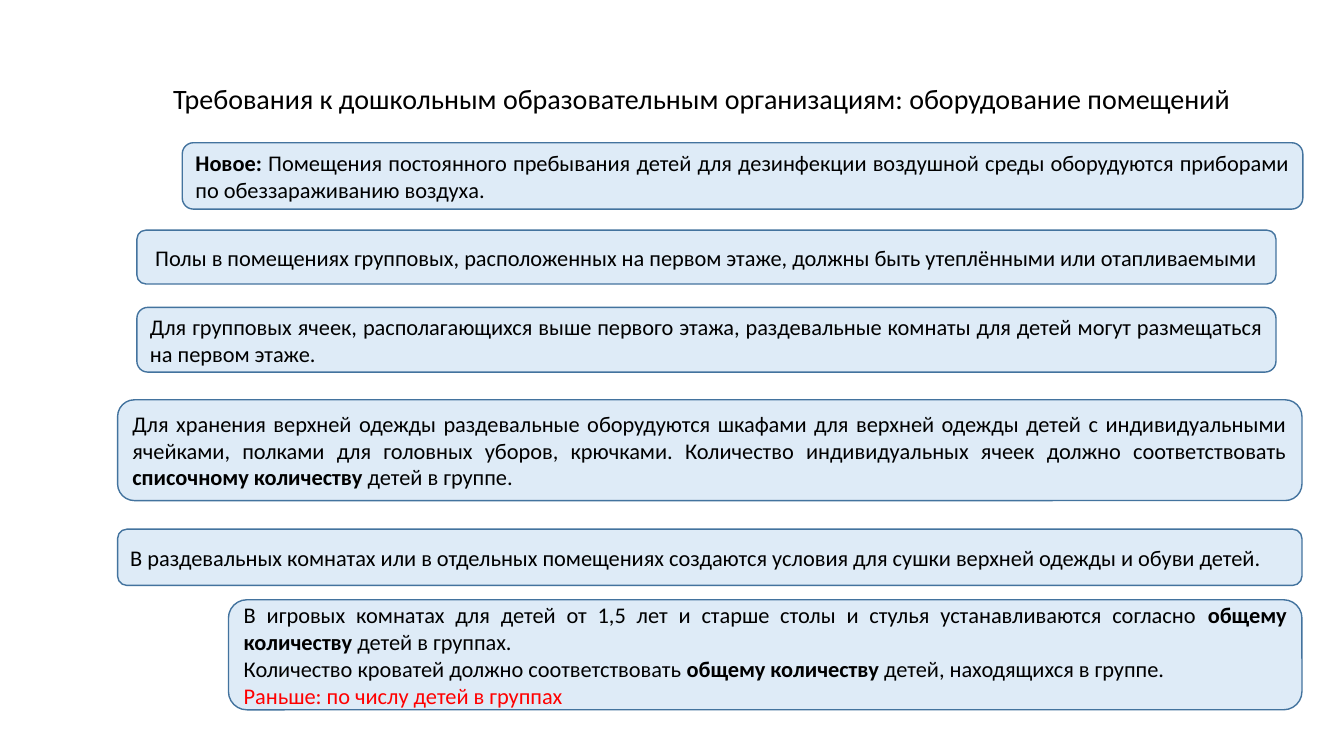
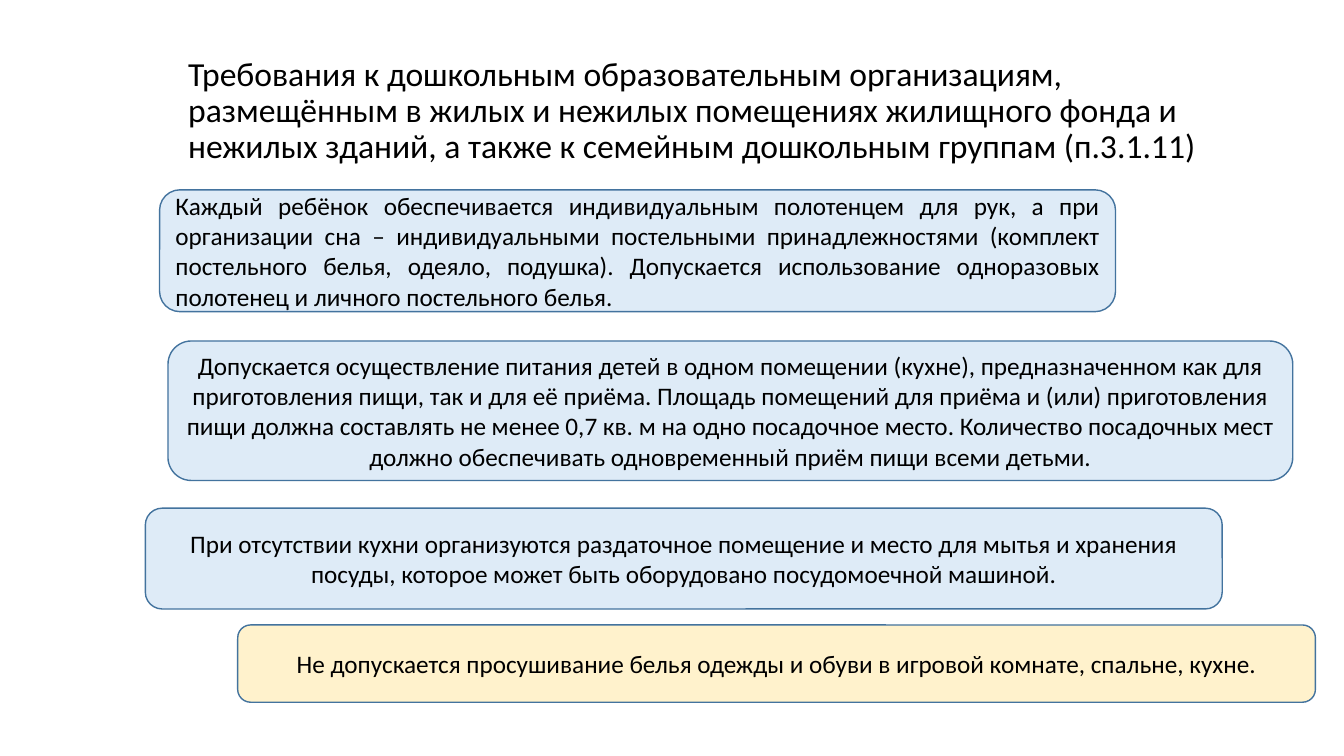
from dataclasses import dataclass

from pptx import Presentation
from pptx.dml.color import RGBColor
from pptx.enum.shapes import MSO_SHAPE as Shape
from pptx.enum.text import MSO_ANCHOR as Anchor, MSO_AUTO_SIZE as Fit, PP_ALIGN as Align
from pptx.util import Inches, Pt

WIDE, HIGH = Inches(13.33), Inches(7.5)
COL, ROW = WIDE / 160, HIGH / 90  # grid of 160 columns by 90 rows
FONT = "Calibri"
BLACK, RED = "000000", "FF0000"
BLUE, CREAM, EDGE = "DEEBF7", "FFF2CC", "43739E"


@dataclass
class Card:
    """Box is left, top, width, height on the grid; *stars* mark bold text."""
    box: tuple
    text: str
    align: Align = Align.CENTER
    fill: str = BLUE
    note: str = ""


def tint(code):
    return RGBColor.from_string(code)


def place(shape, box):
    left, top, wide, high = box
    shape.left, shape.top = round(left * COL), round(top * ROW)
    shape.width, shape.height = round(wide * COL), round(high * ROW)


def style(para, size, align, color=BLACK):
    para.alignment = align
    font = para.font
    font.name, font.size = FONT, Pt(size)
    font.color.rgb = tint(color)


def write(para, text):
    for i, part in enumerate(text.split("*")):
        if part:
            run = para.add_run()
            run.text = part
            if i % 2:
                run.font.bold = True


def add_title(slide, box, text, size):
    title = slide.shapes.title
    place(title, box)
    frame = title.text_frame
    frame.text = text
    frame.word_wrap = True
    frame.auto_size = Fit.NONE
    frame.vertical_anchor = Anchor.MIDDLE
    para = frame.paragraphs[0]
    para.line_spacing = 0.9
    style(para, size, Align.LEFT)


def add_card(slide, card, size):
    shape = slide.shapes.add_shape(Shape.ROUNDED_RECTANGLE, 0, 0, 0, 0)
    place(shape, card.box)
    shape.shadow.inherit = False
    shape.fill.solid()
    shape.fill.fore_color.rgb = tint(card.fill)
    shape.line.color.rgb = tint(EDGE)
    shape.line.width = Pt(1)
    frame = shape.text_frame
    frame.word_wrap = True
    frame.vertical_anchor = Anchor.MIDDLE
    lines = [(text, BLACK) for text in card.text.split("\n")]
    if card.note:
        lines.append((card.note, RED))
    for i, (text, color) in enumerate(lines):
        para = frame.add_paragraph() if i else frame.paragraphs[0]
        style(para, size, card.align, color)
        write(para, text)


def add_page(deck, title, box, head, body, cards):
    """Adds a title of size head and cards with text of size body."""
    slide = deck.slides.add_slide(deck.slide_layouts[5])
    add_title(slide, box, title, head)
    for card in cards:
        add_card(slide, card, body)


ROOMS = [
    Card((21.7, 17, 133.4, 7.9),
         "*Новое: *Помещения постоянного пребывания детей для дезинфекции воздушной "
         "среды оборудуются приборами по обеззараживанию воздуха.", Align.JUSTIFY),
    Card((16.3, 27.4, 135.6, 6.4),
         "Полы в помещениях групповых, расположенных на первом этаже, должны быть "
         "утеплёнными или отапливаемыми"),
    Card((16.3, 36.6, 135.6, 7.7),
         "Для групповых ячеек, располагающихся выше первого этажа, раздевальные "
         "комнаты для детей могут размещаться на первом этаже.", Align.JUSTIFY),
    Card((14, 47.6, 141, 12),
         "Для хранения верхней одежды раздевальные оборудуются шкафами для верхней "
         "одежды детей с индивидуальными ячейками, полками для головных уборов, "
         "крючками. Количество индивидуальных ячеек должно соответствовать "
         "*списочному количеству *детей в группе.", Align.JUSTIFY),
    Card((14, 63, 141, 6.7),
         "В раздевальных комнатах или в отдельных помещениях создаются условия для "
         "сушки верхней одежды и обуви детей.", Align.JUSTIFY),
    Card((27.2, 71.4, 127.8, 13.1),
         "В игровых комнатах для детей от 1,5 лет и старше столы и стулья "
         "устанавливаются согласно *общему количеству *детей в группах.\n"
         "Количество кроватей должно соответствовать *общему количеству *детей, "
         "находящихся в группе.", Align.JUSTIFY,
         note="Раньше: по числу детей в группах"),
]

HOMES = [
    Card((19, 22.6, 113.8, 14.5),
         "Каждый ребёнок обеспечивается индивидуальным полотенцем для рук, а при "
         "организации сна – индивидуальными постельными принадлежностями (комплект "
         "постельного белья, одеяло, подушка). Допускается использование одноразовых "
         "полотенец и личного постельного белья.", Align.JUSTIFY),
    Card((20, 40.6, 133.9, 16.6),
         "Допускается осуществление питания детей в одном помещении (кухне), "
         "предназначенном как для приготовления пищи, так и для её приёма. Площадь "
         "помещений для приёма и (или) приготовления пищи должна составлять не менее "
         "0,7 кв. м на одно посадочное место. Количество посадочных мест должно "
         "обеспечивать одновременный приём пищи всеми детьми."),
    Card((17.3, 60.5, 128.2, 12),
         "При отсутствии кухни организуются раздаточное помещение и место для мытья "
         "и хранения посуды, которое может быть оборудовано посудомоечной машиной."),
    Card((28.3, 74.4, 128.3, 9.2),
         "Не допускается просушивание белья одежды и обуви в игровой комнате, "
         "спальне, кухне.", fill=CREAM),
]


def main():
    deck = Presentation()
    deck.slide_width, deck.slide_height = WIDE, HIGH
    add_page(deck, "Требования к дошкольным образовательным организациям: "
             "оборудование помещений", (19.4, 9, 138.7, 5.8), 20, 16, ROOMS)
    add_page(deck, "Требования к дошкольным образовательным организациям, "
             "размещённым в жилых и нежилых помещениях жилищного фонда и нежилых "
             "зданий, а также к семейным дошкольным группам (п.3.1.11)",
             (21.2, 5.8, 131.5, 15), 24, 18, HOMES)
    deck.save("out.pptx")


if __name__ == "__main__":
    main()
